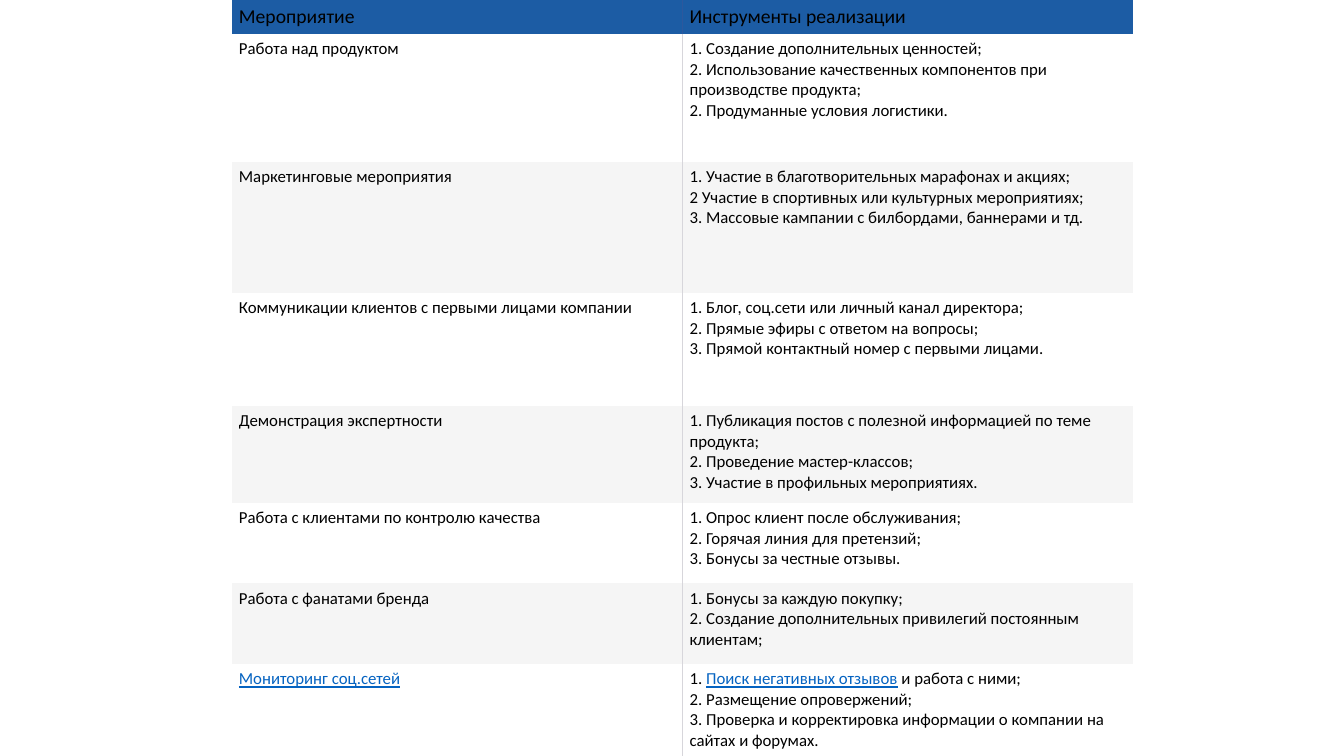
from lxml import etree
from pptx import Presentation
from pptx.dml.color import RGBColor
from pptx.oxml.ns import qn
from pptx.util import Inches, Pt

COLORS = {
    "header": "1C5CA4",
    "header_line": "2D589D",
    "white": "FFFFFF",
    "band": "F5F5F5",
    "line": "D7D6DB",
    "text": "000000",
    "link": "0563C1",
}
NO_STYLE = "{2D5ABB26-0587-4C30-8999-92F81FD0307C}"

# Row height, activity, lines of tools
ROWS = [
    (0.32, "Мероприятие", ["Инструменты реализации"]),
    (1.27, "Работа над продуктом", [
        "1. Создание дополнительных ценностей;",
        "2. Использование качественных компонентов при производстве продукта;",
        "2. Продуманные условия логистики."]),
    (1.3, "Маркетинговые мероприятия", [
        "1. Участие в благотворительных марафонах и акциях;",
        "2 Участие в спортивных или культурных мероприятиях;",
        "3. Массовые кампании с билбордами, баннерами и тд."]),
    (1.12, "Коммуникации клиентов с первыми лицами компании", [
        "1. Блог, соц.сети или личный канал директора;",
        "2. Прямые эфиры с ответом на вопросы;",
        "3. Прямой контактный номер с первыми лицами."]),
    (0.96, "Демонстрация экспертности", [
        "1. Публикация постов с полезной информацией по теме продукта;",
        "2. Проведение мастер-классов;",
        "3. Участие в профильных мероприятиях."]),
    (0.8, "Работа с клиентами по контролю качества", [
        "1. Опрос клиент после обслуживания;",
        "2. Горячая линия для претензий;",
        "3. Бонусы за честные отзывы."]),
    (0.8, "Работа с фанатами бренда", [
        "1. Бонусы за каждую покупку;",
        "2. Создание дополнительных привилегий постоянным клиентам;"]),
    (1.12, "Мониторинг соц.сетей", [
        "1. Поиск негативных отзывов и работа с ними;",
        "2. Размещение опровержений;",
        "3. Проверка и корректировка информации о компании на сайтах и форумах."]),
]
LINKS = ["Мониторинг соц.сетей", "Поиск негативных отзывов"]


def add_run(p, text, size, link=False):
    r = p.add_run()
    r.text = text
    r.font.name = "Calibri"
    r.font.size = Pt(size)
    r.font.underline = link
    r.font.color.rgb = RGBColor.from_string(COLORS["link" if link else "text"])


def add_border(cell, tag, color):
    ln = etree.Element(qn(tag), w=str(Pt(0.75)))
    fill = etree.SubElement(ln, qn("a:solidFill"))
    etree.SubElement(fill, qn("a:srgbClr"), val=color)
    cell._tc.get_or_add_tcPr().insert(0, ln)


prs = Presentation()
prs.slide_width, prs.slide_height = Inches(13.33), Inches(7.5)
s = prs.slides.add_slide(prs.slide_layouts[6])

# Table frame
height = sum(row[0] for row in ROWS)
table = s.shapes.add_table(len(ROWS), 2, Inches(2.3), Inches(0),
                           Inches(8.94), Inches(height)).table
table.horz_banding = False
table._tbl.tblPr.find(qn("a:tableStyleId")).text = NO_STYLE
for col in table.columns:
    col.width = Inches(4.47)

# Rows
for i, (row_height, activity, tools) in enumerate(ROWS):
    table.rows[i].height = Inches(row_height)
    size = 12 if i else 14
    fill = "header" if i == 0 else "white" if i % 2 else "band"
    line = COLORS["line" if i else "header_line"]
    for j, lines in enumerate(([activity], tools)):
        cell = table.cell(i, j)
        cell.margin_left = cell.margin_right = Inches(0.07)
        cell.margin_top = cell.margin_bottom = Inches(0.05)
        cell.fill.solid()
        cell.fill.fore_color.rgb = RGBColor.from_string(COLORS[fill])
        add_border(cell, "a:lnL" if j else "a:lnR", line)

        # Text, with link wording set apart
        p = cell.text_frame.paragraphs[0]
        for n, text in enumerate(lines):
            if n:
                p.add_line_break()
            link = next((words for words in LINKS if words in text), None)
            if link is None:
                add_run(p, text, size)
                continue
            before, _, after = text.partition(link)
            for part in (before, link, after):
                if part:
                    add_run(p, part, size, part == link)

        # Line breaks take the size of the text
        for br in p._p.findall(qn("a:br")):
            etree.SubElement(br, qn("a:rPr"), sz=str(size * 100))

prs.save("out.pptx")
